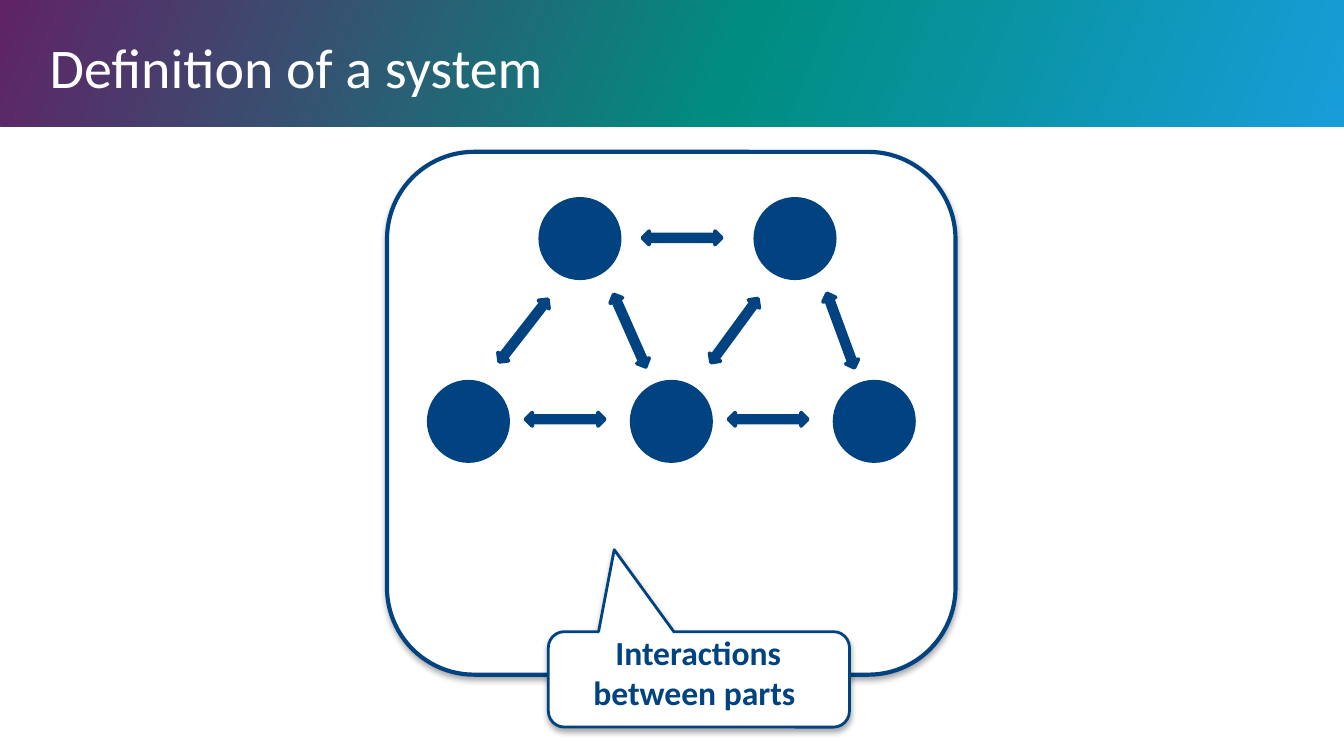
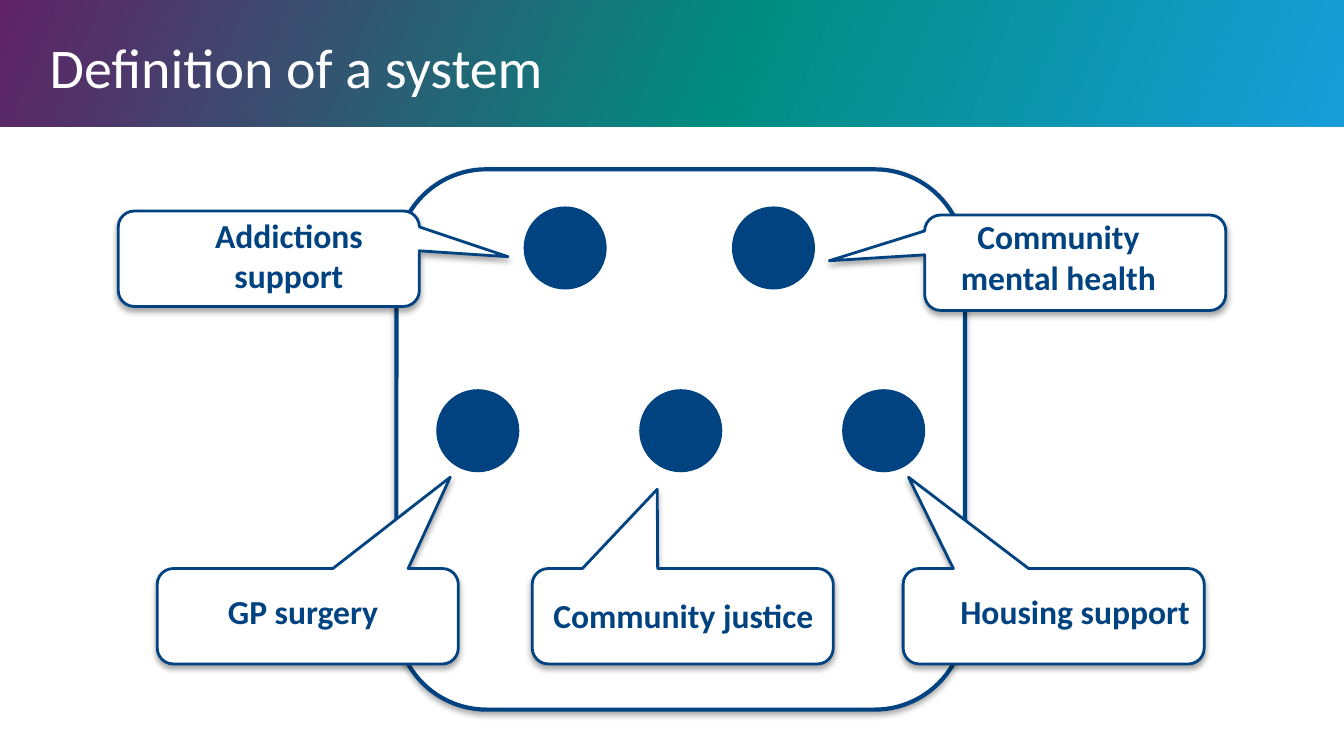
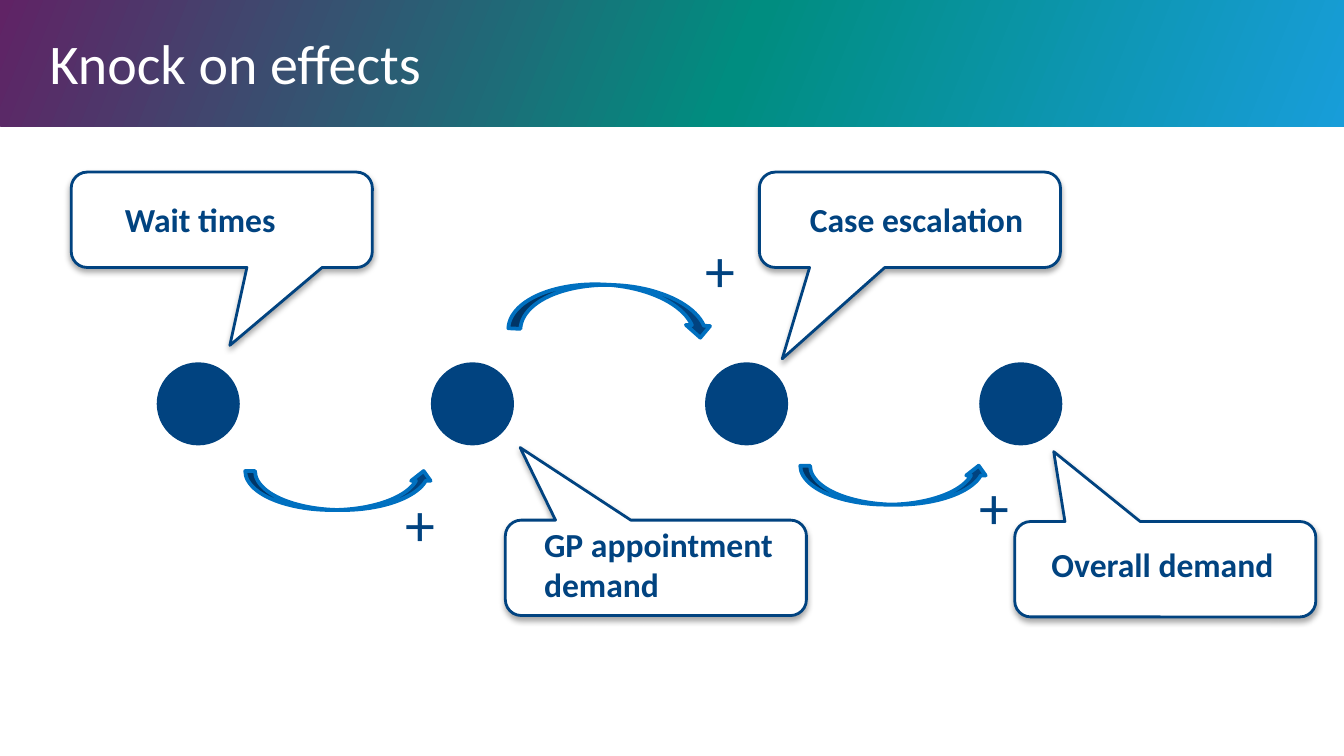
import copy
from dataclasses import dataclass

import pptx
import pptx.dml.color
import pptx.enum.shapes
import pptx.enum.text
import pptx.oxml
import pptx.oxml.ns
import pptx.util

SHAPE = pptx.enum.shapes.MSO_SHAPE
ALIGN = pptx.enum.text.PP_ALIGN
ANCHOR = pptx.enum.text.MSO_ANCHOR
AUTO_SIZE = pptx.enum.text.MSO_AUTO_SIZE

COLUMNS = 10
ROWS = COLUMNS * 9 / 16
SLIDE_WIDTH = pptx.util.Inches(10)
CELL = SLIDE_WIDTH / COLUMNS
TITLE_ONLY = 5


@dataclass(frozen=True)
class Theme:
    font: str = "Calibri"
    navy: str = "014380"
    blue: str = "0070C0"
    white: str = "FFFFFF"
    band: tuple = ((0, "602365"), (0.55, "008D80"), (1, "189DD9"))
    band_angle: int = 338
    title_size: int = 30
    label_size: int = 18
    sign_size: int = 32
    boundary_line: float = 2.25
    part_line: float = 2
    callout_line: float = 1.5


THEME = Theme()
PART_SIZE = 0.59
ARROW_HEIGHT = 0.1
CALLOUT_WIDTH = 2.24
CALLOUT_HEIGHT = 0.71
LABEL_HEIGHT = 0.71
SIGN_WIDTH = 0.34
SIGN_HEIGHT = 0.64


def grid(*cells):
    return [pptx.util.Emu(round(cell * CELL)) for cell in cells]


def rgb(code):
    return pptx.dml.color.RGBColor.from_string(code)


def apply(target, formats):
    for attribute, value in formats.items():
        setattr(target, attribute, value)


def add_shadow(shape):
    effects = shape._element.spPr.find(pptx.oxml.ns.qn("a:effectLst"))
    effects.append(pptx.oxml.parse_xml(
        f'<a:outerShdw {pptx.oxml.ns.nsdecls("a")} blurRad="40000" dist="23000" '
        'dir="5400000" rotWithShape="0"><a:srgbClr val="000000">'
        '<a:alpha val="35000"/></a:srgbClr></a:outerShdw>'))


def draw(shapes, kind, box, fill, line, width, rotation=0, shadow=False):
    shape = shapes.add_shape(kind, *grid(*box))
    shape.shadow.inherit = False
    shape.fill.solid()
    shape.fill.fore_color.rgb = rgb(fill)
    shape.line.color.rgb = rgb(line)
    apply(shape.line, {"width": pptx.util.Pt(width)})
    apply(shape, {"rotation": rotation})
    if shadow:
        add_shadow(shape)
    return shape


def write(frame, text, size, color, bold, align):
    paragraph = frame.paragraphs[0]
    paragraph.alignment = align
    run = paragraph.add_run()
    run.text = text
    apply(run.font, {"name": THEME.font, "size": pptx.util.Pt(size), "bold": bold})
    run.font.color.rgb = rgb(color)


def add_band(slide):
    band = slide.shapes.add_shape(SHAPE.RECTANGLE, *grid(0, 0, COLUMNS, 0.94))
    band.shadow.inherit = False
    band.line.fill.background()
    band.fill.gradient()
    band.fill.gradient_angle = THEME.band_angle
    first = band.fill.gradient_stops[0]._gs
    first.addnext(copy.deepcopy(first))
    for stop, (position, color) in zip(band.fill.gradient_stops, THEME.band):
        stop.position = position
        stop.color.rgb = rgb(color)
    slide.slide_layout.shapes._spTree.insert(2, band._element)


def add_titled_slide(deck, heading, top=0.29):
    slide = deck.slides.add_slide(deck.slide_layouts[TITLE_ONLY])
    title = slide.shapes.title
    apply(title, dict(zip(("left", "top", "width", "height"), grid(0.37, top, 9.28, 0.41))))
    apply(title.text_frame, {
        "margin_left": 0, "margin_top": 0, "margin_right": 0, "margin_bottom": 0,
        "vertical_anchor": ANCHOR.MIDDLE, "word_wrap": True, "auto_size": AUTO_SIZE.NONE,
    })
    write(title.text_frame, heading, THEME.title_size, THEME.white, False, ALIGN.LEFT)
    return slide


def add_boundary(shapes, box):
    draw(shapes, SHAPE.ROUNDED_RECTANGLE, box, THEME.white, THEME.navy,
         THEME.boundary_line, shadow=True)


def add_part_row(shapes, left, top, step, count):
    for index in range(count):
        box = (left + index * step, top, PART_SIZE, PART_SIZE)
        draw(shapes, SHAPE.OVAL, box, THEME.navy, THEME.navy, THEME.part_line)


def add_interaction(shapes, left, top, rotation=0):
    draw(shapes, SHAPE.LEFT_RIGHT_ARROW, (left, top, PART_SIZE, ARROW_HEIGHT),
         THEME.navy, THEME.navy, THEME.part_line, rotation)


def add_effect(shapes, kind, box, rotation):
    draw(shapes, kind, box, THEME.navy, THEME.blue, THEME.part_line, rotation)


def add_callout(shapes, left, top, tip_x, tip_y):
    callout = draw(shapes, SHAPE.ROUNDED_RECTANGULAR_CALLOUT,
                   (left, top, CALLOUT_WIDTH, CALLOUT_HEIGHT),
                   THEME.white, THEME.navy, THEME.callout_line, 180, True)
    callout.adjustments[0] = (left - tip_x) / CALLOUT_WIDTH + 0.5
    callout.adjustments[1] = (top - tip_y) / CALLOUT_HEIGHT + 0.5


def add_words(shapes, text, box, size, bold, align, wrap):
    words = shapes.add_textbox(*grid(*box))
    apply(words.text_frame, {"word_wrap": wrap, "auto_size": AUTO_SIZE.SHAPE_TO_FIT_TEXT})
    write(words.text_frame, text, size, THEME.navy, bold, align)


def add_label(shapes, text, left, top, width, height=LABEL_HEIGHT, align=ALIGN.CENTER):
    add_words(shapes, text, (left, top, width, height), THEME.label_size, True, align, True)


def add_sign(shapes, left, top):
    add_words(shapes, "+", (left, top, SIGN_WIDTH, SIGN_HEIGHT),
              THEME.sign_size, False, ALIGN.LEFT, False)


def build_interactions(slide):
    system = slide.shapes.add_group_shape().shapes
    add_boundary(system, (2.88, 1.13, 4.23, 3.89))
    add_part_row(system, 4.02, 1.48, 1.6, 2)
    add_part_row(system, 3.19, 2.84, 1.51, 3)
    add_interaction(system, 4.78, 1.72)
    for left in (3.91, 5.42):
        add_interaction(system, left, 3.07)
    for left, rotation in ((3.6, 307.9), (4.39, 66.1), (5.17, 306.2), (5.96, 69.8)):
        add_interaction(system, left, 2.41, rotation)
    add_callout(system, 4.08, 4.7, 4.57, 4.09)
    add_label(system, "Interactions between parts ", 4.02, 4.65, 2.35)


def build_services(slide):
    system = slide.shapes.add_group_shape().shapes
    add_boundary(system, (2.95, 1.26, 4.23, 4.02))
    add_part_row(system, 3.91, 1.55, 1.55, 2)
    add_part_row(system, 3.26, 2.91, 1.51, 3)
    services = (
        ((0.88, 1.57, 3.78, 1.91), ("Addictions support", 1.24, 1.55, 1.82, 1.01)),
        ((1.17, 4.23, 3.35, 3.55), ("GP surgery", 1.51, 4.35, 1.49)),
        ((6.88, 1.6, 6.17, 1.94), ("Community mental health", 6.87, 1.56, 2.01, 1.01)),
        ((6.72, 4.23, 6.76, 3.55), ("Housing support", 6.95, 4.35, 2.1)),
        ((3.96, 4.23, 4.89, 3.64), ("Community justice", 4.01, 4.38, 2.15)),
    )
    for callout, label in services:
        add_callout(system, *callout)
        add_label(system, *label)


def build_knock_on(slide):
    shapes = slide.shapes
    add_part_row(shapes, 1.18, 2.71, 2.04, 4)
    effects = (
        (SHAPE.CURVED_RIGHT_ARROW, (2.38, 2.95, 0.29, 1.4), 270, (2.92, 3.57)),
        (SHAPE.CURVED_LEFT_ARROW, (4.37, 1.54, 0.36, 1.52), 272.8, (5.15, 1.68)),
        (SHAPE.CURVED_RIGHT_ARROW, (6.51, 2.91, 0.29, 1.4), 270, (7.19, 3.45)),
    )
    for kind, box, rotation, sign in effects:
        add_effect(shapes, kind, box, rotation)
        add_sign(shapes, *sign)
    stages = (
        ((0.53, 1.28, 1.71, 2.57), ("Wait times", 0.37, 1.43, 2.24, 0.4)),
        ((3.76, 3.87, 3.87, 3.33),
         ("GP appointment demand", 3.95, 3.85, 2.01, 1.01, ALIGN.LEFT)),
        ((5.65, 1.28, 5.82, 2.67), ("Case escalation", 5.7, 1.43, 2.24)),
        ((7.55, 3.88, 7.84, 3.36), ("Overall demand", 7.53, 4, 2.24)),
    )
    for callout, label in stages:
        add_callout(shapes, *callout)
        add_label(shapes, *label)


def main():
    deck = pptx.Presentation()
    deck.slide_width, deck.slide_height = grid(COLUMNS, ROWS)
    interactions = add_titled_slide(deck, "Definition of a system")
    add_band(interactions)
    build_interactions(interactions)
    build_services(add_titled_slide(deck, "Definition of a system"))
    build_knock_on(add_titled_slide(deck, "Knock on effects", 0.26))
    deck.save("out.pptx")


if __name__ == "__main__":
    main()
